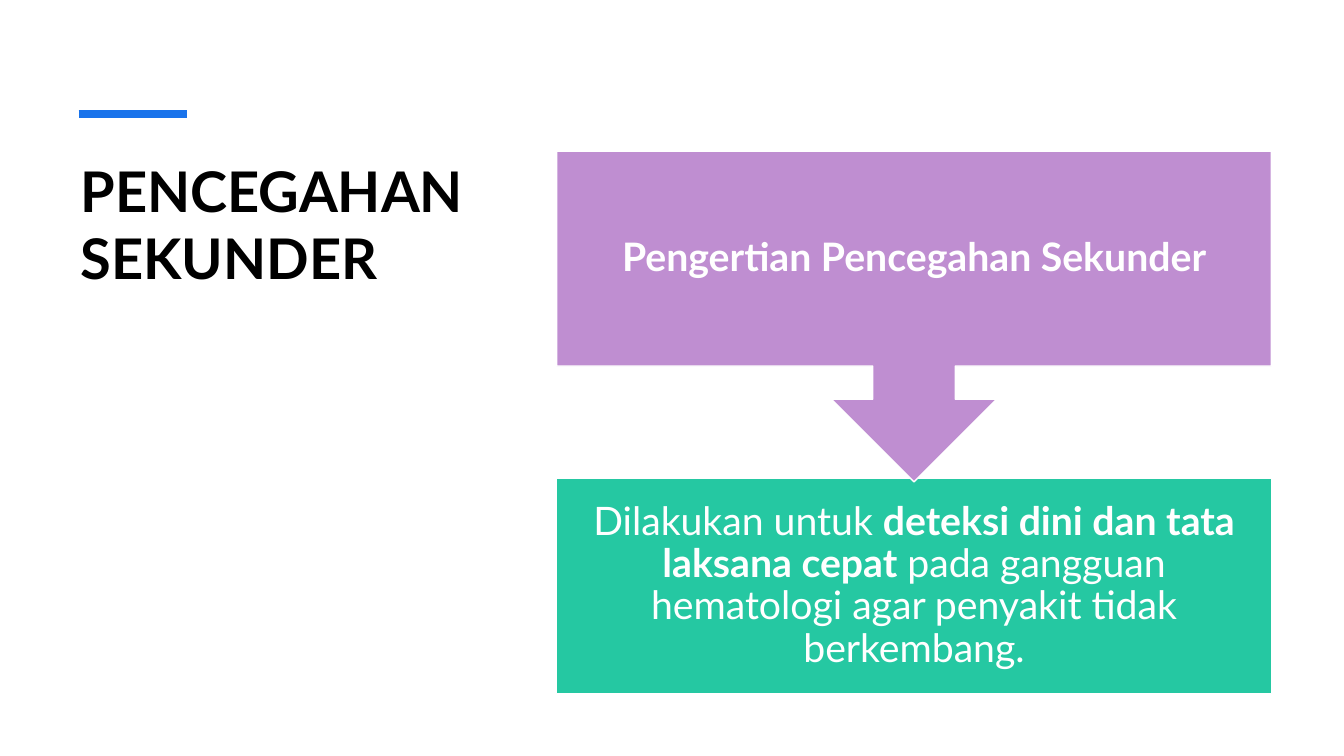
from dataclasses import dataclass

from lxml import etree
from pptx import Presentation
from pptx.dml.color import RGBColor
from pptx.enum.shapes import MSO_CONNECTOR, MSO_SHAPE
from pptx.enum.text import MSO_ANCHOR, MSO_AUTO_SIZE, PP_ALIGN
from pptx.oxml.ns import qn
from pptx.slide import Slide
from pptx.util import Inches, Pt

RECTANGLE = MSO_SHAPE.RECTANGLE
ARROW_BOX = MSO_SHAPE.DOWN_ARROW_CALLOUT
STRAIGHT = MSO_CONNECTOR.STRAIGHT
TOP, MIDDLE = MSO_ANCHOR.TOP, MSO_ANCHOR.MIDDLE
LEFT, CENTER = PP_ALIGN.LEFT, PP_ALIGN.CENTER
NO_FIT = MSO_AUTO_SIZE.NONE

FONT = "Lato"
COLORS = {
    "title": "000000",
    "accent": "1973EB",
    "definition": "BF8ED1",
    "purpose": "25C8A2",
    "white": "FFFFFF",
}
TITLE_ONLY = 5
STEP_LEFT, STEP_WIDTH = 5.52, 7.09
STEP_INSET = 0.22


@dataclass(frozen=True)
class Span:
    text: str
    bold: bool = False


@dataclass(frozen=True)
class Step:
    preset: MSO_SHAPE
    top: float
    height: float
    color: str
    spans: tuple[Span, ...]


STEPS = (
    Step(RECTANGLE, 4.75, 2.13, "purpose", (
        Span("Dilakukan untuk "),
        Span("deteksi dini dan tata laksana cepat", True),
        Span(" pada gangguan hematologi agar penyakit tidak berkembang."),
    )),
    Step(ARROW_BOX, 1.5, 3.28, "definition", (
        Span("Pengertian Pencegahan Sekunder", True),
    )),
)


def rgb(name: str) -> RGBColor:
    return RGBColor.from_string(COLORS[name])


def set_all(target: object, values: dict) -> None:
    for name, value in values.items():
        setattr(target, name, value)


def add_spans(para, spans: tuple[Span, ...], size: float, color: str) -> None:
    for span in spans:
        run = para.add_run()
        run.text = span.text
        set_all(run.font, {"name": FONT, "size": Pt(size), "bold": span.bold})
        run.font.color.rgb = rgb(color)


def add_title(page: Slide) -> None:
    title = page.shapes.title
    set_all(title, {"left": Inches(0.7), "top": Inches(1.5),
                    "width": Inches(4.02), "height": Inches(4.29)})
    frame = title.text_frame
    set_all(frame, {"word_wrap": True, "auto_size": NO_FIT,
                    "vertical_anchor": TOP})
    para = frame.paragraphs[0]
    para.alignment = LEFT
    add_spans(para, (Span("PENCEGAHAN SEKUNDER", True),), 40, "title")


def add_accent(page: Slide) -> None:
    accent = page.shapes.add_connector(
        STRAIGHT, Inches(0.78), Inches(1.13), Inches(1.85), Inches(1.13))
    accent.line.color.rgb = rgb("accent")
    accent.line.width = Pt(6)
    etree.SubElement(accent._element.spPr, qn("a:effectLst"))


def add_step(page: Slide, step: Step) -> None:
    box = page.shapes.add_shape(
        step.preset, Inches(STEP_LEFT), Inches(step.top),
        Inches(STEP_WIDTH), Inches(step.height))
    box.shadow.inherit = False
    box.fill.solid()
    box.fill.fore_color.rgb = rgb(step.color)
    box.line.color.rgb = rgb("white")
    box.line.width = Pt(1)
    frame = box.text_frame
    set_all(frame, {"word_wrap": True, "vertical_anchor": MIDDLE})
    set_all(frame, {f"margin_{side}": Inches(STEP_INSET)
                    for side in ("left", "top", "right", "bottom")})
    para = frame.paragraphs[0]
    set_all(para, {"alignment": CENTER, "line_spacing": 0.9})
    add_spans(para, step.spans, 28, "white")


def main() -> None:
    deck = Presentation()
    set_all(deck, {"slide_width": Inches(13.33), "slide_height": Inches(7.5)})
    page = deck.slides.add_slide(deck.slide_layouts[TITLE_ONLY])
    add_title(page)
    add_accent(page)
    for step in STEPS:
        add_step(page, step)
    deck.save("out.pptx")


if __name__ == "__main__":
    main()
